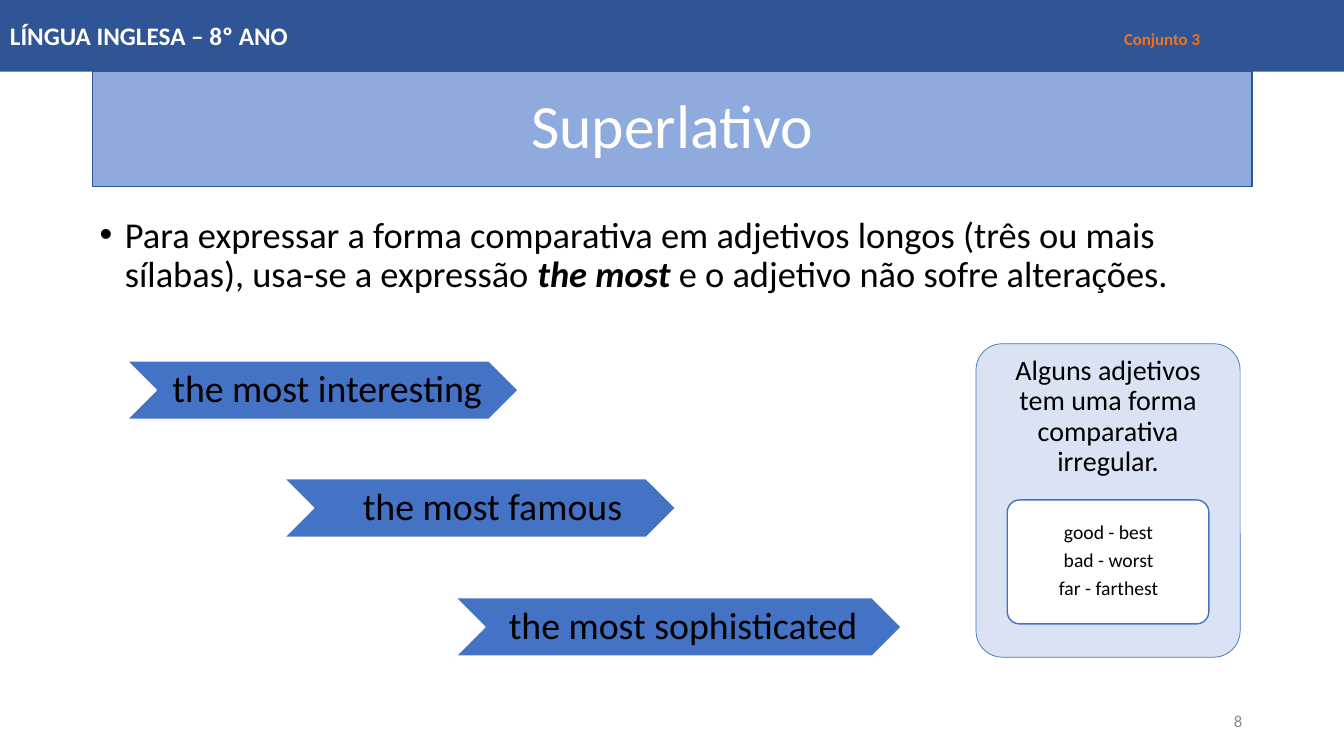
from dataclasses import dataclass, field

from lxml import etree
from pptx import Presentation
from pptx.dml.color import RGBColor
from pptx.enum.shapes import MSO_SHAPE
from pptx.enum.text import MSO_ANCHOR, PP_ALIGN
from pptx.oxml.ns import qn
from pptx.util import Inches, Pt

RECT, ROUND, ARROW = MSO_SHAPE.RECTANGLE, MSO_SHAPE.ROUNDED_RECTANGLE, MSO_SHAPE.CHEVRON
TOP, MID = MSO_ANCHOR.TOP, MSO_ANCHOR.MIDDLE
LEFT, MAIN, RIGHT = PP_ALIGN.LEFT, PP_ALIGN.CENTER, PP_ALIGN.RIGHT

NAVY, BLUE, SKY, PALE = "2F5597", "4472C4", "8FAADC", "DAE3F3"
WHITE, BLACK, GRAY, GOLD = "FFFFFF", "000000", "8C8C8C", "F47116"

Box = tuple[float, float, float, float]


@dataclass
class Run:
    text: str
    size: float
    color: str = BLACK
    bold: bool = False
    italic: bool = False


@dataclass
class Part:
    """A shape, or a plain text box when kind is None."""
    at: Box
    kind: MSO_SHAPE | None = None
    fill: str = WHITE
    line: str | None = None
    width: float = 1
    lines: list[list[Run]] = field(default_factory=list)
    align: PP_ALIGN = MAIN
    anchor: MSO_ANCHOR = MID
    pad: Box = (0.1, 0.05, 0.1, 0.05)
    form: dict = field(default_factory=dict)
    bullet: bool = False
    tab: float = 0


def rgb(code: str) -> RGBColor:
    return RGBColor.from_string(code)


def apply(target, form: dict) -> None:
    for name, value in form.items():
        setattr(target, name, value)


def write(frame, part: Part) -> None:
    left, top, right, low = map(Inches, part.pad)
    apply(frame, {"word_wrap": True, "vertical_anchor": part.anchor,
                  "margin_left": left, "margin_top": top,
                  "margin_right": right, "margin_bottom": low})
    for i, runs in enumerate(part.lines):
        para = frame.add_paragraph() if i else frame.paragraphs[0]
        apply(para, {"alignment": part.align, **part.form})
        props = para._p.get_or_add_pPr()
        if part.bullet:
            props.set("marL", str(Inches(0.25)))
            props.set("indent", str(-Inches(0.25)))
            etree.SubElement(props, qn("a:buFont"), typeface="Arial")
            etree.SubElement(props, qn("a:buChar"), char="•")
        if part.tab:
            stops = etree.SubElement(props, qn("a:tabLst"))
            etree.SubElement(stops, qn("a:tab"), pos=str(Inches(part.tab)), algn="l")
        for item in runs:
            run = para.add_run()
            run.text = item.text
            apply(run.font, {"name": "Calibri", "size": Pt(item.size),
                             "bold": item.bold, "italic": item.italic})
            run.font.color.rgb = rgb(item.color)


def draw(slide, part: Part) -> None:
    at = map(Inches, part.at)
    if part.kind is None:
        shape = slide.shapes.add_textbox(*at)
    else:
        shape = slide.shapes.add_shape(part.kind, *at)
        shape.shadow.inherit = False
        shape.fill.solid()
        shape.fill.fore_color.rgb = rgb(part.fill)
        if part.line:
            shape.line.color.rgb = rgb(part.line)
            shape.line.width = Pt(part.width)
        else:
            shape.line.fill.background()
        if part.kind == ROUND:
            shape.adjustments[0] = 0.1
    if part.lines:
        write(shape.text_frame, part)


TIGHT = {"line_spacing": 0.9}

# Title, body, page number and top bar
FRAME = [
    Part((0.92, 0.71, 11.5, 1.14), RECT, SKY, NAVY, form=TIGHT,
         lines=[[Run("Superlativo", 44, WHITE)]]),
    Part((0.89, 2.1, 11.41, 1.06), align=LEFT, anchor=TOP, bullet=True,
         form={**TIGHT, "space_before": Pt(10)},
         lines=[[Run("Para expressar a forma comparativa em adjetivos longos "
                     "(três ou mais sílabas), usa-se a expressão ", 26),
                 Run("the most", 26, bold=True, italic=True),
                 Run(" e o adjetivo não sofre alterações.", 26)]]),
    Part((9.42, 6.95, 3, 0.4), align=RIGHT, lines=[[Run("8", 12, GRAY)]]),
    Part((0, 0, 13.33, 0.71), RECT, NAVY, align=LEFT, tab=11.05,
         lines=[[Run("LÍNGUA INGLESA – 8º ANO\t", 18, WHITE, True),
                 Run("Conjunto 3", 12, GOLD, True)]]),
]

# Card of irregular forms
PAIRS = ["good - best", "bad - worst", "far - farthest"]
CARD = [
    Part((9.68, 3.41, 2.62, 3.11), ROUND, PALE, BLUE, 0.5, anchor=TOP, form=TIGHT,
         lines=[[Run("Alguns adjetivos tem uma forma comparativa irregular.", 20)]]),
    Part((9.99, 4.96, 2, 1.23), ROUND, WHITE, BLUE),
    Part((10.02, 4.99, 1.95, 1.16), pad=(0.04, 0.03, 0.04, 0.03),
         form={**TIGHT, "space_after": Pt(4.9)},
         lines=[[Run(pair, 14)] for pair in PAIRS]),
]

# Chevrons: left, top, width, label left, label width, label
STEPS = [
    (1.26, 3.58, 3.88, 1.55, 3.3, "the most interesting"),
    (2.82, 4.75, 3.88, 3.19, 3.3, "the most famous"),
    (4.52, 5.93, 4.42, 4.85, 3.76, "the most sophisticated"),
]
TALL = 0.58


def main() -> None:
    deck = Presentation()
    apply(deck, {"slide_width": Inches(13.33), "slide_height": Inches(7.5)})
    slide = deck.slides.add_slide(deck.slide_layouts[6])
    for part in FRAME + CARD:
        draw(slide, part)
    for left, top, width, start, span, label in STEPS:
        draw(slide, Part((left, top, width, TALL), ARROW, BLUE, WHITE))
        draw(slide, Part((start, top, span, TALL), pad=(0.13, 0.04, 0.04, 0.04),
                         form=TIGHT, lines=[[Run(label, 27)]]))
    deck.save("out.pptx")


if __name__ == "__main__":
    main()
